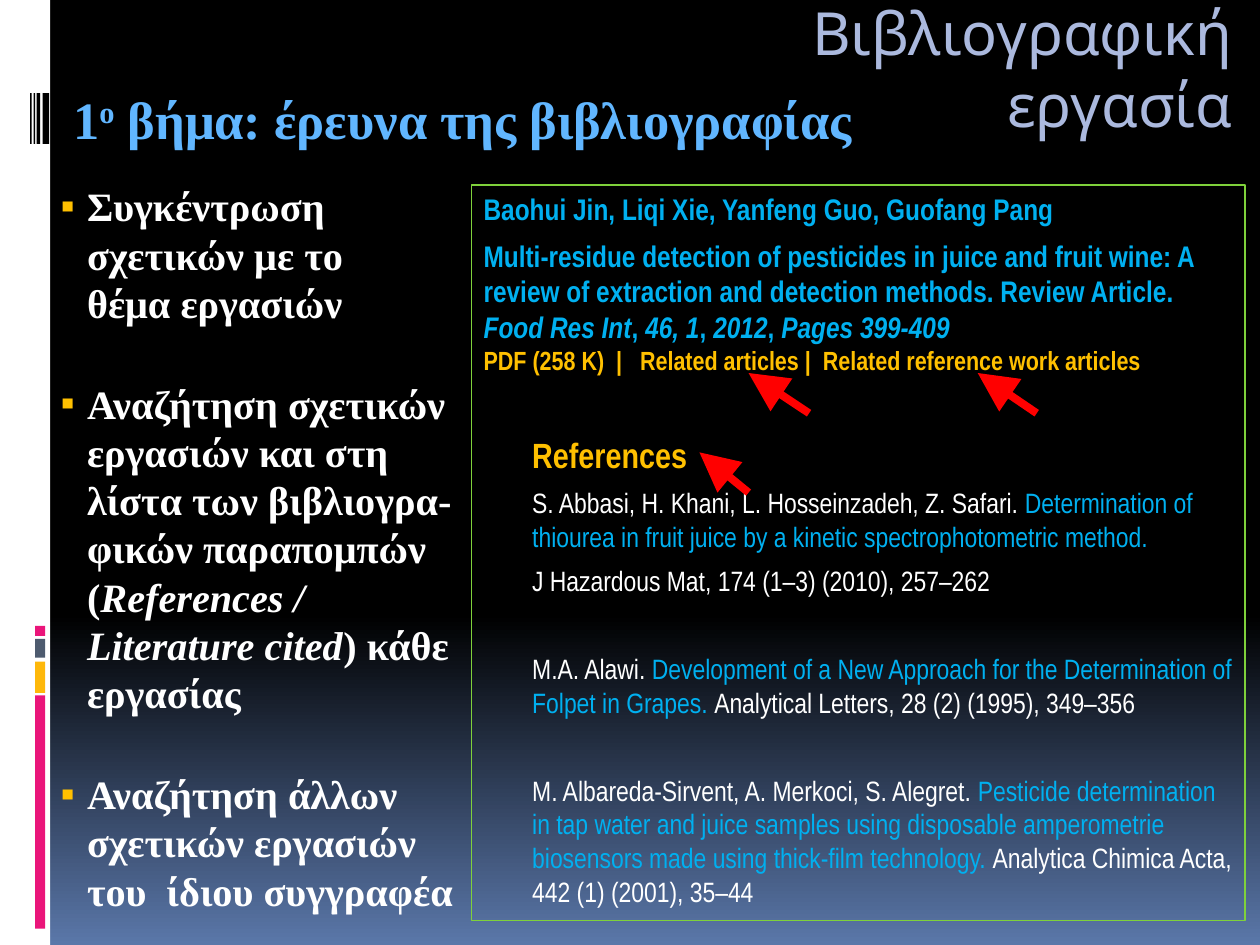
from lxml.etree import SubElement
from pptx import Presentation
from pptx.dml.color import RGBColor
from pptx.enum.dml import MSO_LINE
from pptx.enum.shapes import MSO_CONNECTOR, MSO_SHAPE
from pptx.enum.text import MSO_ANCHOR, MSO_AUTO_SIZE, PP_ALIGN
from pptx.oxml.ns import qn
from pptx.util import Cm, Pt

COLORS = {
    "white": "FFFFFF", "black": "000000", "pink": "EA157A", "amber": "FEB80A",
    "slate": "4E5B6F", "blue": "5A77A9", "lilac": "ABB9DE", "sky": "61B6FF",
    "cyan": "00B0F0", "gold": "FFC000", "green": "7FD13B", "red": "FF0000",
}

TITLE = "Βιβλιογραφική εργασία"

HEAD = {"name": "Times New Roman", "size": 30, "bold": True, "color": "sky"}
ITEM = {**HEAD, "size": 23, "color": "white"}
PAPER = {"name": "Arial Narrow", "size": 17, "bold": True, "color": "cyan"}
JOURNAL = {**PAPER, "italic": True}
LINKS = {**PAPER, "size": 15, "color": "gold"}
REF_HEAD = {**LINKS, "size": 20}
REF = {**PAPER, "size": 16, "bold": False, "color": "white"}
REF_TITLE = {**REF, "color": "cyan"}

HEAD_PARA = {"after": 18, "left": 0.71}
ITEM_PARA = {"after": 30, "left": 0.99, "hang": 0.53, "bullet": "▪"}
PAPER_PARA = {"after": 6}
REF_PARA = {"after": 6, "left": 0.98}
REF_GAP = {**REF_PARA, "before": 25.2}

STEPS = [
    (HEAD_PARA, [("1", HEAD), ("ο", {**HEAD, "raised": True}),
                 (" βήμα: έρευνα της βιβλιογραφίας", HEAD)]),
    (ITEM_PARA, [("Συγκέντρωση\nσχετικών με το\nθέμα εργασιών", ITEM)]),
    (ITEM_PARA, [("Αναζήτηση σχετικών\nεργασιών και στη\nλίστα των βιβλιογρα-\nφικών παραπομπών\n(", ITEM),
                 ("References /\nLiterature cited", {**ITEM, "italic": True}),
                 (") κάθε\nεργασίας", ITEM)]),
    (ITEM_PARA, [("Αναζήτηση άλλων\nσχετικών εργασιών\nτου  ίδιου συγγραφέα", ITEM)]),
]

SOURCES = [
    (PAPER_PARA, [("Baohui Jin, Liqi Xie, Yanfeng Guo, Guofang Pang", PAPER)]),
    (PAPER_PARA, [("Multi-residue detection of pesticides in juice and fruit wine: A review of "
                   "extraction and detection methods. Review Article. ", PAPER),
                  ("Food Res Int", JOURNAL), (",", PAPER), (" 46, 1", JOURNAL), (", ", PAPER),
                  ("2012", JOURNAL), (", ", PAPER), ("Pages 399-409\n", JOURNAL),
                  ("PDF (258 K)  |   Related articles |  Related reference work articles", LINKS)]),
    ({**REF_PARA, "before": 26.6}, [("References", REF_HEAD)]),
    (REF_PARA, [("S. Abbasi, H. Khani, L. Hosseinzadeh, Z. Safari. ", REF),
                ("Determination of thiourea in fruit juice by a kinetic "
                 "spectrophotometric method.", REF_TITLE)]),
    (REF_PARA, [("J Hazardous Mat, 174 (1–3) (2010), 257–262", REF)]),
    (REF_GAP, [("M.A. Alawi. ", REF),
               ("Development of a New Approach for the Determination of Folpet in Grapes. ", REF_TITLE),
               ("Analytical Letters, 28 (2) (1995), 349–356", REF)]),
    (REF_GAP, [("M. Albareda-Sirvent, A. Merkoci, S. Alegret. ", REF),
               ("Pesticide determination in tap water and juice samples using disposable "
                "amperometrie biosensors made using thick-film technology. ", REF_TITLE),
               ("Analytica Chimica Acta, 442 (1) (2001), 35–44", REF)]),
]

SIDE_BARS = [
    (0, 0, 1.01, 19.05, "white"),
    (0.71, 14.02, 0.2, 4.7, "pink"),
    (0.71, 13.34, 0.2, 0.63, "amber"),
    (0.71, 12.88, 0.2, 0.38, "slate"),
    (0.71, 12.62, 0.2, 0.2, "pink"),
    (0.86, 1.88, 0.13, 1.02, "black"),
    (0.74, 1.88, 0.07, 1.02, "black"),
    (0.68, 1.88, 0.03, 1.02, "black"),
    (0.61, 1.88, 0.03, 1.02, "black"),
]

ARROWS = [
    (20.9, 8.33, 19.71, 7.52),
    (16.31, 8.33, 15.09, 7.52),
    (15.09, 9.93, 14.1, 9.12),
]


def rgb(name):
    return RGBColor.from_string(COLORS[name])


def place(sp, *box):
    for key, value in zip(("left", "top", "width", "height"), box):
        setattr(sp, key, Cm(value))


def add_rect(s, *box):
    sp = s.shapes.add_shape(MSO_SHAPE.RECTANGLE, *map(Cm, box))
    sp.shadow.inherit = False
    return sp


def add_run(p, text, style):
    r = p.add_run()
    r.text = text
    for key in ("name", "bold", "italic"):
        setattr(r.font, key, style.get(key, False))
    r.font.size = Pt(style["size"])
    r.font.color.rgb = rgb(style["color"])
    if style.get("raised"):
        r.font._element.set("baseline", "30000")


def add_bullet(pPr, char):
    if not char:
        SubElement(pPr, qn("a:buNone"))
        return
    color = SubElement(pPr, qn("a:buClr"))
    SubElement(color, qn("a:srgbClr"), val=COLORS["gold"])
    SubElement(pPr, qn("a:buFont"), typeface="Times New Roman")
    SubElement(pPr, qn("a:buChar"), char=char)


def fill_text(tf, paragraphs):
    for key, value in {"word_wrap": True, "auto_size": MSO_AUTO_SIZE.NONE,
                       "vertical_anchor": MSO_ANCHOR.TOP}.items():
        setattr(tf, key, value)
    for i, (para, runs) in enumerate(paragraphs):
        p = tf.add_paragraph() if i else tf.paragraphs[0]
        pPr = p._p.get_or_add_pPr()
        pPr.set("marL", str(Cm(para.get("left", 0))))
        pPr.set("indent", str(-Cm(para.get("hang", 0))))
        add_bullet(pPr, para.get("bullet"))
        for key, value in {"alignment": para.get("align", PP_ALIGN.LEFT),
                           "line_spacing": 1.0,
                           "space_before": Pt(para.get("before", 0)),
                           "space_after": Pt(para.get("after", 0))}.items():
            setattr(p, key, value)
        for text, style in runs:
            for n, line in enumerate(text.split("\n")):
                if n:
                    p.add_line_break()
                    SubElement(p._p[-1], qn("a:rPr"), sz=str(style["size"] * 100))
                if line:
                    add_run(p, line, style)


def add_arrow(s, *ends):
    line = s.shapes.add_connector(MSO_CONNECTOR.STRAIGHT, *map(Cm, ends))
    line.line.color.rgb = rgb("red")
    line.line.width = Pt(4.5)
    line.line.dash_style = MSO_LINE.SOLID
    SubElement(line.line._get_or_add_ln(), qn("a:tailEnd"), type="triangle", w="lg", len="lg")
    SubElement(line._element.spPr, qn("a:effectLst"))


def main():
    prs = Presentation()
    prs.slide_width, prs.slide_height = Cm(25.4), Cm(19.05)
    s = prs.slides.add_slide(prs.slide_layouts[1])

    fill = s.background.fill
    fill.gradient()
    fill.gradient_angle = 270
    for stop, (position, color) in zip(fill.gradient_stops, ((0.65, "black"), (1, "blue"))):
        stop.position = position
        stop.color.rgb = rgb(color)

    for *box, color in SIDE_BARS:
        bar = add_rect(s, *box)
        bar.fill.solid()
        bar.fill.fore_color.rgb = rgb(color)
        bar.line.fill.background()

    title, body = s.placeholders
    place(title, 12.9, -0.2, 12.19, 1.32)
    fill_text(title.text_frame, [({"align": PP_ALIGN.RIGHT},
                                  [(TITLE, {"name": "Karla", "size": 34, "color": "lilac"})])])
    place(body, 0.51, 1.63, 18.95, 17.09)
    fill_text(body.text_frame, STEPS)

    frame = add_rect(s, 9.5, 3.73, 15.6, 14.83)
    frame.fill.background()
    frame.line.color.rgb = rgb("green")
    frame.line.width = Pt(0.75)
    fill_text(frame.text_frame, SOURCES)

    for ends in ARROWS:
        add_arrow(s, *ends)

    prs.save("out.pptx")


if __name__ == "__main__":
    main()
